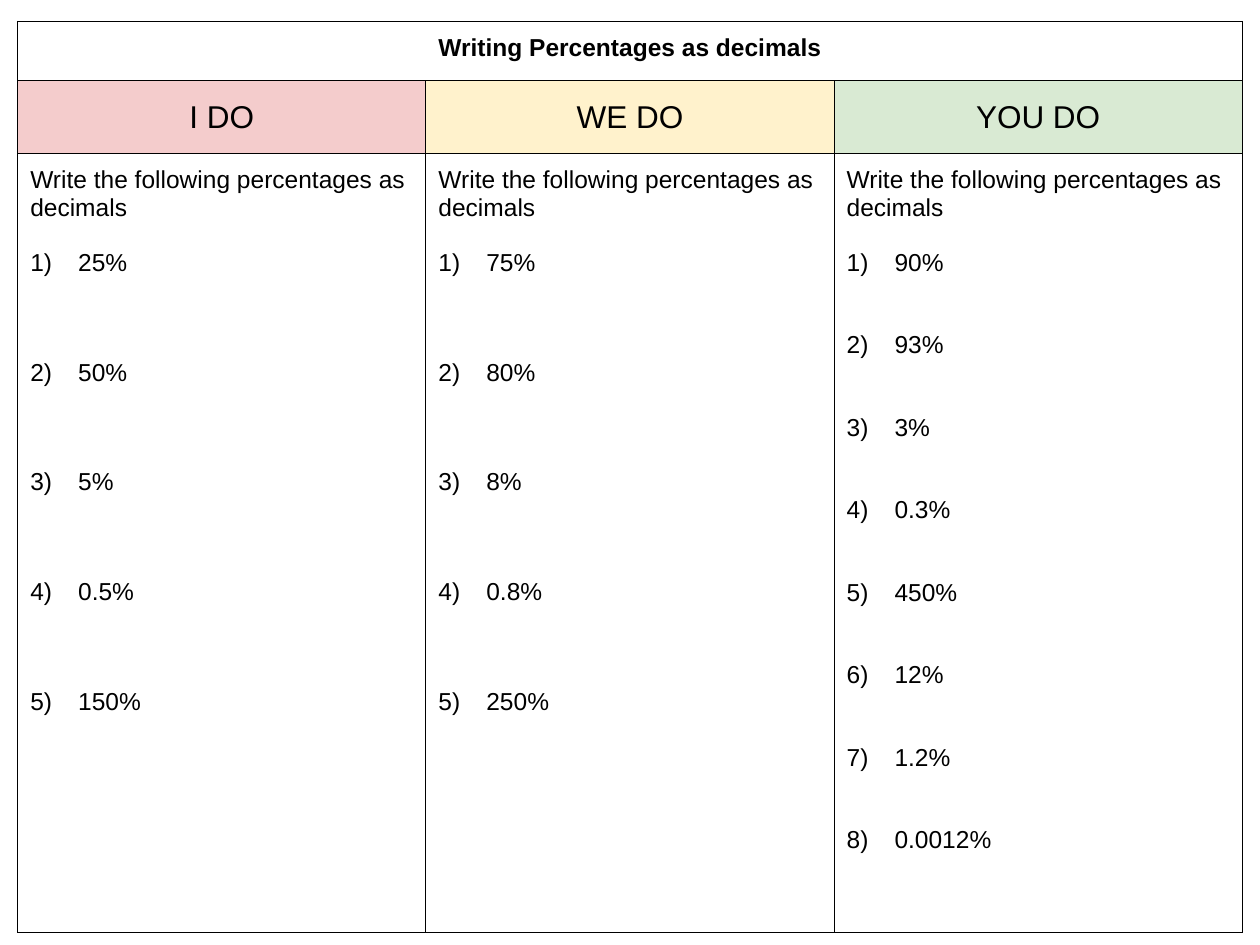
from lxml.etree import SubElement
from pptx import Presentation
from pptx.dml.color import RGBColor
from pptx.enum.text import MSO_ANCHOR, PP_ALIGN
from pptx.oxml.ns import qn
from pptx.util import Inches, Pt

TITLE = "Writing Percentages as decimals"
TASK = "Write the following percentages as decimals"
LINE = 15.7  # height of one text line in points

# heading, fill, blank lines between questions, questions
STAGES = [
    ("I DO", "F4CCCC", 3, ["25%", "50%", "5%", "0.5%", "150%"]),
    ("WE DO", "FFF2CC", 3, ["75%", "80%", "8%", "0.8%", "250%"]),
    ("YOU DO", "D9EAD3", 2,
     ["90%", "93%", "3%", "0.3%", "450%", "12%", "1.2%", "0.0012%"]),
]
WIDTH = 3.24
ROWS = [0.47, 0.58, 6.18]


def color(code):
    return RGBColor.from_string(code)


def style(para, size, bold=False):
    font = para.runs[0].font
    font.name = "Arial"
    font.size = Pt(size)
    font.bold = bold
    font.color.rgb = color("000000")


def border(cell):
    props = cell._tc.get_or_add_tcPr()
    for index, side in enumerate(("lnL", "lnR", "lnT", "lnB")):
        line = props.makeelement(qn(f"a:{side}"), {"w": str(Pt(0.75))})
        fill = SubElement(line, qn("a:solidFill"))
        SubElement(fill, qn("a:srgbClr"), val="000000")
        props.insert(index, line)  # borders must precede the cell fill


def number(para):
    """Turn a paragraph into an item of a 1), 2), 3) list."""
    props = para._p.get_or_add_pPr()
    props.set("marL", str(Inches(0.38)))
    props.set("indent", str(-Inches(0.38)))
    tint = SubElement(props, qn("a:buClr"))
    SubElement(tint, qn("a:srgbClr"), val="000000")
    SubElement(props, qn("a:buFont"), typeface="Arial")
    SubElement(props, qn("a:buAutoNum"), type="arabicParenR")


def heading(cell, text, size, bold=False):
    cell.text_frame.text = text
    para = cell.text_frame.paragraphs[0]
    para.alignment = PP_ALIGN.CENTER
    style(para, size, bold)


def exercise(cell, gap, items):
    frame = cell.text_frame
    frame.text = TASK
    style(frame.paragraphs[0], 14)
    for index, item in enumerate(items):
        para = frame.add_paragraph()
        para.text = item
        para.space_before = Pt(LINE * (gap if index else 1))
        number(para)
        style(para, 14)


def grid(slide):
    """Add the empty bordered table."""
    count = len(STAGES)
    frame = slide.shapes.add_table(
        len(ROWS), count, Inches(0.14), Inches(0.17),
        Inches(WIDTH * count), Inches(sum(ROWS)))
    table = frame.table
    table.first_row = table.horz_banding = False
    for column in table.columns:
        column.width = Inches(WIDTH)
    for row, height in zip(table.rows, ROWS):
        row.height = Inches(height)
    for cell in table.iter_cells():
        cell.margin_left = cell.margin_right = Inches(0.1)
        cell.margin_top = cell.margin_bottom = Inches(0.1)
        cell.fill.background()
        border(cell)
    return table


def main():
    deck = Presentation()
    deck.slide_width, deck.slide_height = Inches(10), Inches(7.5)
    slide = deck.slides.add_slide(deck.slide_layouts[6])
    table = grid(slide)
    top = table.cell(0, 0)
    top.merge(table.cell(0, len(STAGES) - 1))
    heading(top, TITLE, 14, True)
    for col, (name, tint, gap, items) in enumerate(STAGES):
        head = table.cell(1, col)
        head.fill.solid()
        head.fill.fore_color.rgb = color(tint)
        head.vertical_anchor = MSO_ANCHOR.MIDDLE
        heading(head, name, 18)
        exercise(table.cell(2, col), gap, items)
    deck.save("out.pptx")


if __name__ == "__main__":
    main()
